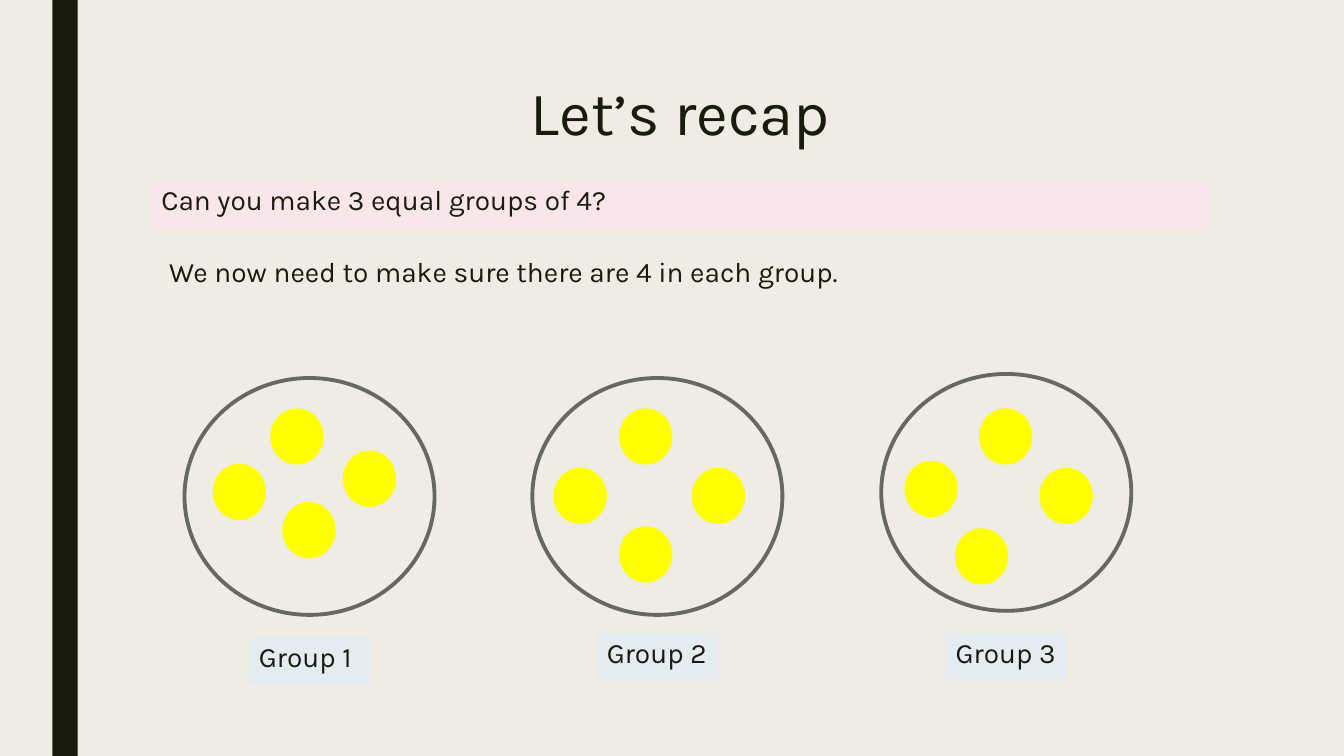
from lxml import etree
from pptx import Presentation
from pptx.dml.color import RGBColor
from pptx.enum import shapes, text
from pptx.oxml import ns
from pptx.util import Inches, Pt

COLORS = {"paper": "EFEDE3", "ink": "191B0E", "pink": "F9E6EA",
          "blue": "E4ECF1", "ring": "686863", "yellow": "FFFF00"}
FONT = "Karla"
TITLE = {"size": 44, "spacing": 0.89, "align": text.PP_ALIGN.CENTER,
         "anchor": text.MSO_ANCHOR.MIDDLE}
BODY = {"size": 20, "spacing": 0.94, "before": 10, "after": 2}

# Each group: label, ring left and top, label top, counter positions
GROUPS = [
    ("Group 1", 1.83, 3.75, 6.32, [(2.7, 4.07), (2.13, 4.62), (2.82, 5), (3.42, 4.49)]),
    ("Group 2", 5.28, 3.75, 6.28, [(6.16, 4.07), (5.51, 4.66), (6.88, 4.66), (6.16, 5.24)]),
    ("Group 3", 8.74, 3.71, 6.28, [(9.73, 4.07), (8.99, 4.59), (10.33, 4.66), (9.49, 5.26)]),
]
RING_SIZE = (2.48, 2.35)
COUNTER_SIZE = (0.49, 0.52)
LABEL_SIZE = (1.2, 0.47)
LABEL_OFFSET = 0.64


def color(name):
    return RGBColor.from_string(COLORS[name])


def place(box, left, top, width, height):
    values = {"left": left, "top": top, "width": width, "height": height}
    for name, value in values.items():
        setattr(box, name, Inches(value))


def paint(box, name):
    box.fill.solid()
    box.fill.fore_color.rgb = color(name)


def write(box, words, style):
    frame = box.text_frame
    frame_format = {"word_wrap": True, "auto_size": text.MSO_AUTO_SIZE.NONE,
                    "vertical_anchor": style.get("anchor", text.MSO_ANCHOR.TOP)}
    for name, value in frame_format.items():
        setattr(frame, name, value)
    para = frame.paragraphs[0]
    para_format = {"alignment": style.get("align", text.PP_ALIGN.LEFT),
                   "line_spacing": style["spacing"],
                   "space_before": Pt(style.get("before", 0)),
                   "space_after": Pt(style.get("after", 0))}
    for name, value in para_format.items():
        setattr(para, name, value)
    span = para.add_run()
    span.text = words
    for name, value in {"name": FONT, "size": Pt(style["size"])}.items():
        setattr(span.font, name, value)
    span.font.color.rgb = color("ink")


def remove_bullet(para):
    properties = para._p.get_or_add_pPr()
    for name in ("marL", "indent"):
        properties.set(name, "0")
    etree.SubElement(properties, ns.qn("a:buNone"))


def add_text(page, words, area, fill=None):
    box = page.shapes.add_textbox(*map(Inches, area))
    if fill:
        paint(box, fill)
    write(box, words, BODY)


def add_figure(page, kind, area, fill=None, line=None):
    figure = page.shapes.add_shape(kind, *map(Inches, area))
    figure.shadow.inherit = False
    if fill:
        paint(figure, fill)
    else:
        figure.fill.background()
    if line:
        figure.line.color.rgb = color(line)
        figure.line.width = Pt(2.75)
    else:
        figure.line.fill.background()


def add_group(page, label, left, top, label_top, counters):
    oval = shapes.MSO_SHAPE.OVAL
    add_figure(page, oval, (left, top, *RING_SIZE), line="ring")
    add_text(page, label, (left + LABEL_OFFSET, label_top, *LABEL_SIZE), "blue")
    for spot in counters:
        add_figure(page, oval, (*spot, *COUNTER_SIZE), "yellow", "yellow")


def main():
    deck = Presentation()
    deck.slide_width, deck.slide_height = Inches(13.33), Inches(7.5)
    page = deck.slides.add_slide(deck.slide_layouts[1])
    paint(page.background, "paper")
    add_figure(page, shapes.MSO_SHAPE.RECTANGLE, (0.52, 0, 0.25, 7.5), "ink")

    title, question = page.shapes.title, page.placeholders[1]
    place(title, 1.5, 0.75, 10.5, 0.8)
    write(title, "Let’s recap", TITLE)
    place(question, 1.5, 1.79, 10.5, 0.47)
    paint(question, "pink")
    write(question, "Can you make 3 equal groups of 4?", BODY)
    remove_bullet(question.text_frame.paragraphs[0])
    add_text(page, "We now need to make sure there are 4 in each group.",
             (1.58, 2.5, 10.5, 0.47))

    for group in GROUPS:
        add_group(page, *group)
    deck.save("out.pptx")


if __name__ == "__main__":
    main()
